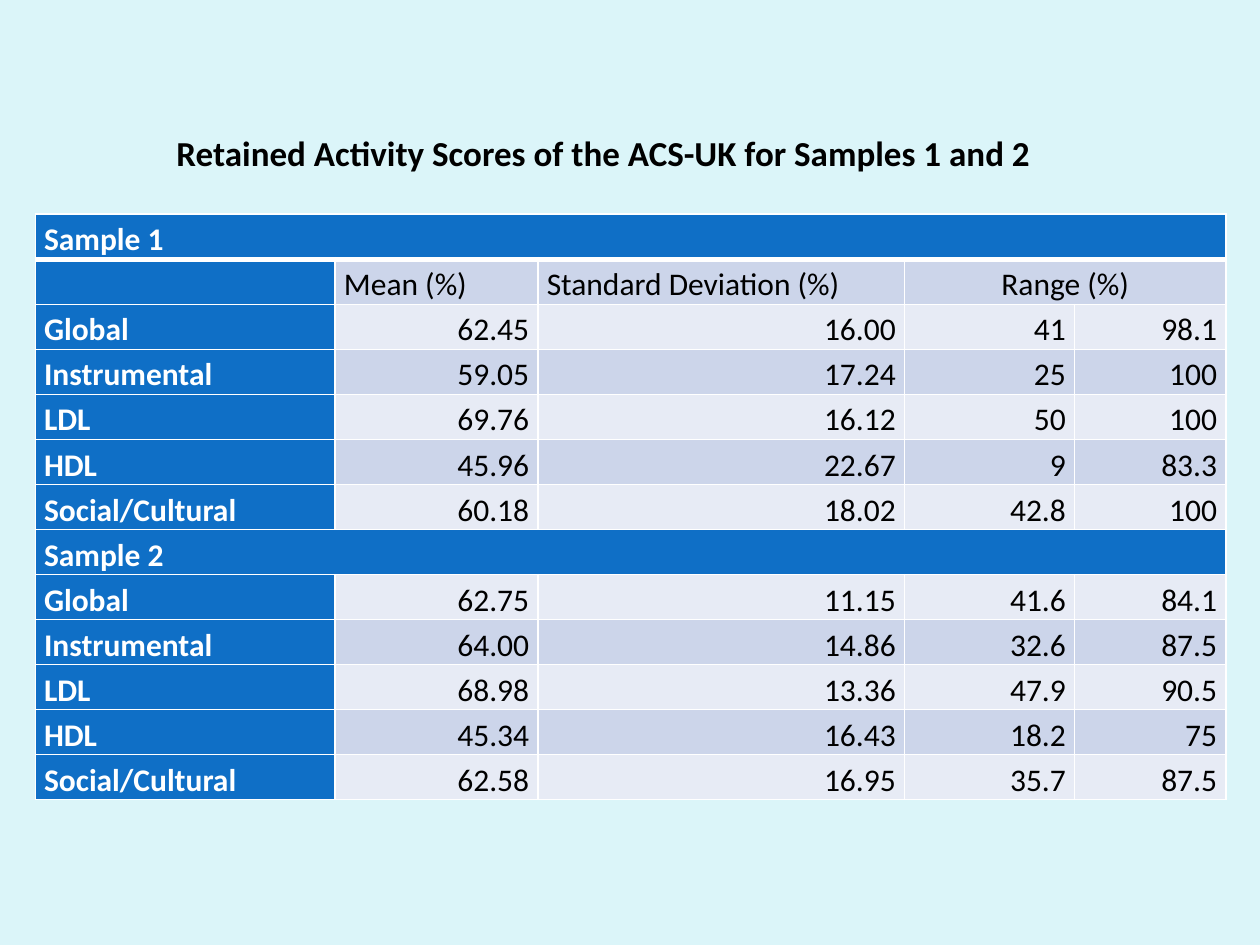
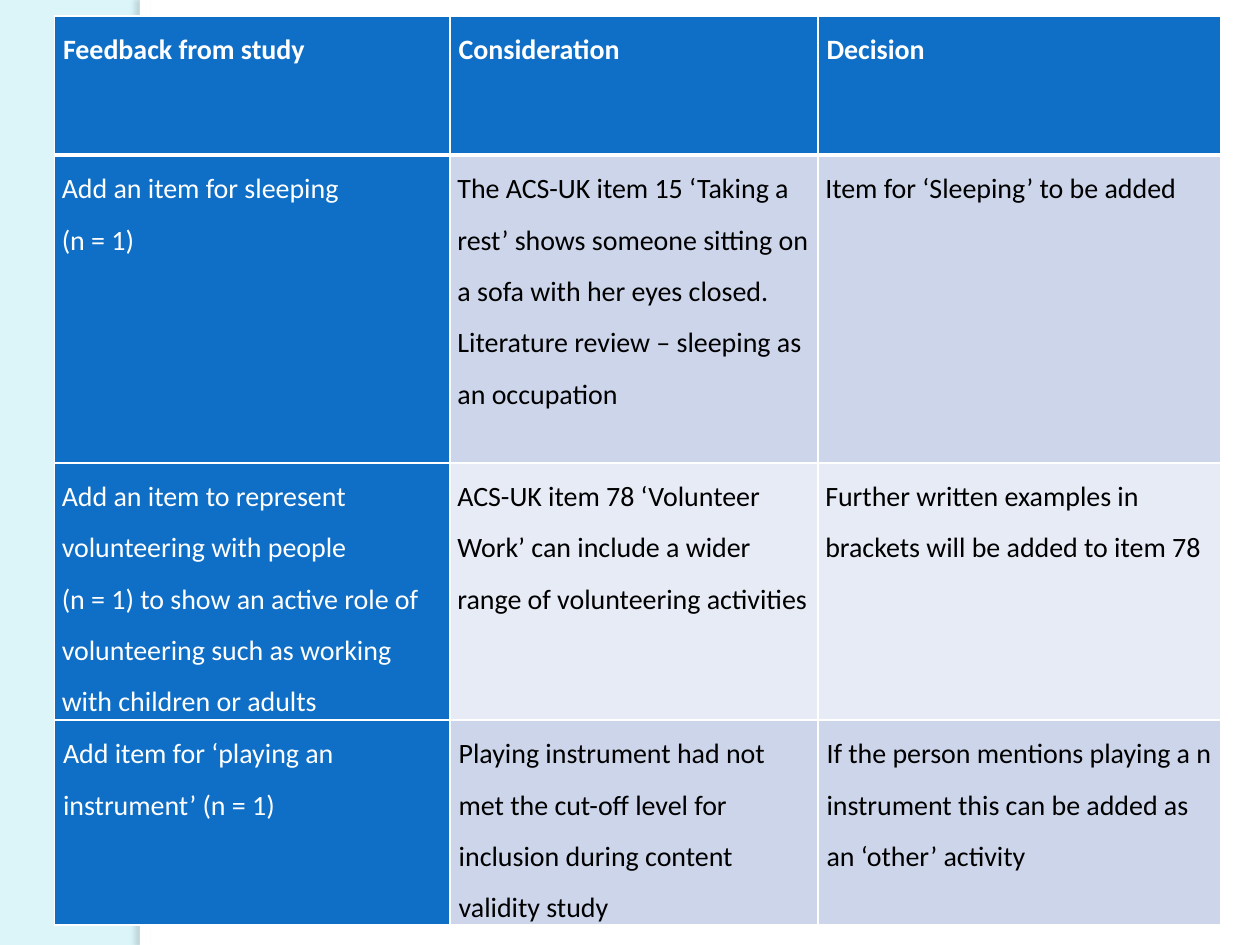
import pptx
import pptx.util
import pptx.dml.color
import pptx.enum.shapes
import pptx.enum.text
import pptx.oxml
import pptx.oxml.ns
from lxml import etree

Pt = pptx.util.Pt
ALIGN = pptx.enum.text.PP_ALIGN
ANCHOR = pptx.enum.text.MSO_ANCHOR
FONT = "Calibri"
PALE, BLUE, WHITE, BLACK = "DBF5F9", "0F6FC6", "FFFFFF", "000000"
BANDS = ("E7EBF5", "CCD5EA")
SHADOW = "6C7A7C"

SCORE_BOX = (20.16, 122.4, 680.4, 334.8)
SCORE_COLUMNS = (171.4, 115.9, 209.5, 97.2, 86.4)
SCORES = [
    ["Sample 1"],
    ["", "Mean (%)", "Standard Deviation (%)", "Range (%)"],
    ["Global", "62.45", "16.00", "41", "98.1"],
    ["Instrumental", "59.05", "17.24", "25", "100"],
    ["LDL", "69.76", "16.12", "50", "100"],
    ["HDL", "45.96", "22.67", "9", "83.3"],
    ["Social/Cultural", "60.18", "18.02", "42.8", "100"],
    ["Sample 2"],
    ["Global", "62.75", "11.15", "41.6", "84.1"],
    ["Instrumental", "64.00", "14.86", "32.6", "87.5"],
    ["LDL", "68.98", "13.36", "47.9", "90.5"],
    ["HDL", "45.34", "16.43", "18.2", "75"],
    ["Social/Cultural", "62.58", "16.95", "35.7", "87.5"],
]

FEEDBACK_BOX = (31, 9.2, 666.7, 519.5)
FEEDBACK_COLUMNS = (226.1, 210.2, 230.4)
FEEDBACK_ROWS = (79.3, 176, 147, 117.2)
FEEDBACK_INSETS = (5.04, 4.32, 4.32, 5.04)
FEEDBACK = [
    ["Feedback from study", "Consideration", "Decision"],
    ["Add an item for sleeping\n(n = 1)",
     "The ACS-UK item 15 ‘Taking a rest’ shows someone sitting on a sofa with her eyes closed.\n"
     "Literature review – sleeping as an occupation",
     "Item for ‘Sleeping’ to be added"],
    ["Add an item to represent volunteering with people\n"
     "(n = 1) to show an active role of volunteering such as working with children or adults",
     "ACS-UK item 78 ‘Volunteer Work’ can include a wider range of volunteering activities",
     "Further written examples in brackets will be added to item 78"],
    ["Add item for ‘playing an instrument’ (n = 1)",
     "Playing instrument had not met the cut-off level for inclusion during content validity study",
     "If the person mentions playing a n instrument this can be added as an ‘other’ activity"],
]


def rgb(value):
    return pptx.dml.color.RGBColor.from_string(value)


def apply(target, **values):
    for name, value in values.items():
        setattr(target, name, value)


def paint(target, colour):
    target.fill.solid()
    target.fill.fore_color.rgb = rgb(colour)


def write(frame, text, size, colour, bold, align=ALIGN.LEFT, spacing=1.0):
    frame.text = text
    for paragraph in frame.paragraphs:
        apply(paragraph, alignment=align, line_spacing=spacing)
        for run in paragraph.runs:
            apply(run.font, name=FONT, size=Pt(size), bold=bold)
            run.font.color.rgb = rgb(colour)


def add_borders(cell, row):
    properties = cell._tc.get_or_add_tcPr()
    heavy = {(0, "lnB"), (1, "lnT")}
    for side in ("lnL", "lnR", "lnT", "lnB"):
        width = 3 if (row, side) in heavy else 1
        line = etree.SubElement(properties, pptx.oxml.ns.qn(f"a:{side}"), w=str(Pt(width)))
        fill = etree.SubElement(line, pptx.oxml.ns.qn("a:solidFill"))
        etree.SubElement(fill, pptx.oxml.ns.qn("a:srgbClr"), val=WHITE)


def add_grid(slide, box, columns, heights, insets, anchor):
    frame = slide.shapes.add_table(len(heights), len(columns), *map(Pt, box))
    grid = frame.table
    apply(grid, first_row=False, horz_banding=False)
    for column, width in zip(grid.columns, columns):
        column.width = Pt(width)
    for r, height in enumerate(heights):
        grid.rows[r].height = Pt(height)
        for c in range(len(columns)):
            cell = grid.cell(r, c)
            apply(cell, margin_left=Pt(insets[r]), margin_right=Pt(insets[r]),
                  margin_top=0, margin_bottom=0, vertical_anchor=anchor)
            add_borders(cell, r)
            paint(cell, BLUE if r == 0 or c == 0 else BANDS[r % 2])
    return grid


def scores_table(slide, box):
    count = len(SCORES)
    grid = add_grid(slide, box, SCORE_COLUMNS, [box[3] / count] * count,
                    [5.04] * count, ANCHOR.BOTTOM)
    last = len(SCORE_COLUMNS) - 1
    for r, values in enumerate(SCORES):
        if len(values) <= last:
            grid.cell(r, len(values) - 1).merge(grid.cell(r, last))
        for c, value in enumerate(values):
            align = ALIGN.RIGHT if c and r > 1 else ALIGN.LEFT
            if value == "Range (%)":
                align = ALIGN.CENTER
            write(grid.cell(r, c).text_frame, value, 18,
                  BLACK if c else WHITE, c == 0, align, 1.07)


def feedback_table(slide, box):
    grid = add_grid(slide, box, FEEDBACK_COLUMNS, FEEDBACK_ROWS, FEEDBACK_INSETS, ANCHOR.TOP)
    for r, values in enumerate(FEEDBACK):
        for c, value in enumerate(values):
            write(grid.cell(r, c).text_frame, value, 16,
                  WHITE if r == 0 or c == 0 else BLACK, r == 0, spacing=1.5)


def scores_title(slide, box):
    title = slide.shapes.title
    apply(title, **dict(zip(("left", "top", "width", "height"), map(Pt, box))))
    frame = title.text_frame
    apply(frame, word_wrap=False, vertical_anchor=ANCHOR.TOP,
          auto_size=pptx.enum.text.MSO_AUTO_SIZE.SHAPE_TO_FIT_TEXT)
    write(frame, "Retained Activity Scores of the ACS-UK for Samples 1 and 2", 20, BLACK, True)


def white_page(slide, box):
    left, top, width, height = box
    for part_width in (width, 5.8):
        panel = slide.shapes.add_shape(pptx.enum.shapes.MSO_SHAPE.RECTANGLE,
                                       *map(Pt, (left, top, part_width, height)))
        panel.shadow.inherit = False
        paint(panel, WHITE)
        panel.line.fill.background()
    effects = panel._element.spPr.find(pptx.oxml.ns.qn("a:effectLst"))
    effects.append(pptx.oxml.parse_xml(
        f'<a:outerShdw {pptx.oxml.ns.nsdecls("a")} blurRad="{Pt(3)}" dist="{Pt(3)}" dir="10800000">'
        f'<a:srgbClr val="{SHADOW}"><a:alpha val="25000"/></a:srgbClr></a:outerShdw>'))


def scores_slide(deck):
    slide = deck.slides.add_slide(deck.slide_layouts.get_by_name("Title Only"))
    scores_table(slide, SCORE_BOX)
    scores_title(slide, (93.6, 71.3, 578.2, 31.7))


def feedback_slide(deck):
    slide = deck.slides.add_slide(deck.slide_layouts.get_by_name("Blank"))
    white_page(slide, (80, 0, 640, 540))
    feedback_table(slide, FEEDBACK_BOX)


def main():
    deck = pptx.Presentation()
    apply(deck, slide_width=Pt(720), slide_height=Pt(540))
    paint(deck.slide_master.background, PALE)
    scores_slide(deck)
    feedback_slide(deck)
    deck.save("out.pptx")


if __name__ == "__main__":
    main()
